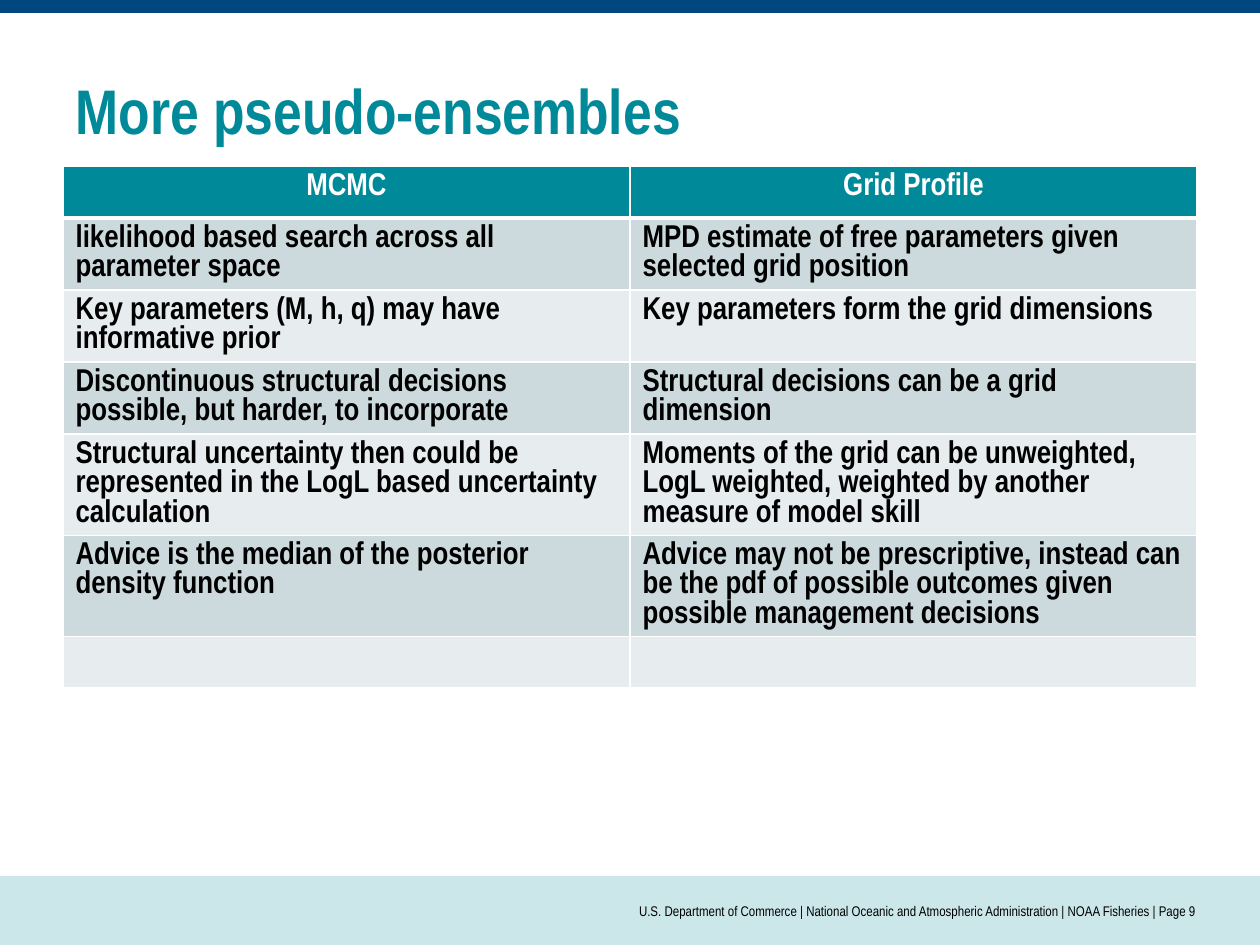
"""Build the slide that compares MCMC with a grid profile."""
from lxml.etree import SubElement
from pptx import Presentation
from pptx.dml.color import RGBColor
from pptx.enum.shapes import MSO_SHAPE
from pptx.enum.text import MSO_ANCHOR, MSO_AUTO_SIZE, PP_ALIGN
from pptx.oxml.ns import qn
from pptx.util import Emu, Pt

TITLE = "More pseudo-ensembles"
FOOTER = " | ".join([
    "U.S. Department of Commerce",
    "National Oceanic and Atmospheric Administration",
    "NOAA Fisheries",
    "Page 9",
])
ROWS = [
    ("MCMC", "Grid Profile"),
    ("likelihood based search across all parameter space",
     "MPD estimate of free parameters given selected grid position"),
    ("Key parameters (M, h, q) may have informative prior",
     "Key parameters form the grid dimensions"),
    ("Discontinuous structural decisions possible, but harder, to incorporate",
     "Structural decisions can be a grid dimension"),
    ("Structural uncertainty then could be represented in the LogL based uncertainty calculation",
     "Moments of the grid can be unweighted, LogL weighted, weighted by another measure of model skill"),
    ("Advice is the median of the posterior density function",
     "Advice may not be prescriptive, instead can be the pdf of possible outcomes "
     "given possible management decisions"),
    ("", ""),
]
ROW_HEIGHTS = [52, 72, 72, 72, 101, 101, 51]
COLORS = {
    "navy": "00467F", "pale": "CCE7EA", "teal": "008998", "white": "FFFFFF",
    "black": "000000", "odd": "CCDADD", "even": "E7EDEF",
}
BANDS = [("navy", (0, 0, 1260, 13)), ("pale", (0, 876, 1260, 69))]
FORMATS = {
    "title": {"size": Pt(36), "bold": True},
    "cell": {"size": Pt(18), "bold": True},
    "footer": {"size": Pt(8), "bold": False},
}
LINE_PITCH = Pt(16.9)


def px(value):
    return Emu(round(value * 914400 / 126))


def color(name):
    return RGBColor.from_string(COLORS[name])


def write(para, text, style, ink, align):
    para.alignment = align
    span = para.add_run()
    span.text = text
    span.font.name = "Arial Narrow"
    span.font.color.rgb = color(ink)
    for key, value in FORMATS[style].items():
        setattr(span.font, key, value)


def set_frame(frame, **values):
    for key, value in values.items():
        setattr(frame, key, value)


def add_borders(cell, top, bottom):
    properties = cell._tc.get_or_add_tcPr()
    for side, width in (("L", 1), ("R", 1), ("T", top), ("B", bottom)):
        line = SubElement(properties, qn(f"a:ln{side}"), w=str(Pt(width)))
        fill = SubElement(line, qn("a:solidFill"))
        SubElement(fill, qn("a:srgbClr"), val=COLORS["white"])


def add_bands(page):
    for name, place in BANDS:
        band = page.shapes.add_shape(MSO_SHAPE.RECTANGLE, *map(px, place))
        band.shadow.inherit = False
        band.fill.solid()
        band.fill.fore_color.rgb = color(name)
        band.line.fill.background()


def add_title(page):
    title = page.shapes.title
    title.left, title.top, title.width, title.height = map(px, (63, 63, 1134, 93))
    set_frame(title.text_frame, word_wrap=True, auto_size=MSO_AUTO_SIZE.NONE,
              vertical_anchor=MSO_ANCHOR.MIDDLE)
    write(title.text_frame.paragraphs[0], TITLE, "title", "teal", PP_ALIGN.LEFT)


def add_comparison(page):
    place = map(px, (63, 166, 1134, sum(ROW_HEIGHTS)))
    table = page.shapes.add_table(len(ROWS), len(ROWS[0]), *place).table
    for row_index, (texts, height) in enumerate(zip(ROWS, ROW_HEIGHTS)):
        table.rows[row_index].height = px(height)
        header = row_index == 0
        fill = "teal" if header else "odd" if row_index % 2 else "even"
        ink = "white" if header else "black"
        align = PP_ALIGN.CENTER if header else PP_ALIGN.LEFT
        for column_index, text in enumerate(texts):
            cell = table.cell(row_index, column_index)
            add_borders(cell, 3 if row_index == 1 else 1, 3 if header else 1)
            cell.fill.solid()
            cell.fill.fore_color.rgb = color(fill)
            if text:
                para = cell.text_frame.paragraphs[0]
                para.line_spacing = LINE_PITCH
                write(para, text, "cell", ink, align)


def add_footer(page):
    box = page.shapes.add_textbox(*map(px, (315, 876, 882, 69)))
    set_frame(box.text_frame, word_wrap=True, margin_left=0, margin_right=0,
              vertical_anchor=MSO_ANCHOR.MIDDLE)
    write(box.text_frame.paragraphs[0], FOOTER, "footer", "black", PP_ALIGN.RIGHT)


def main():
    deck = Presentation()
    deck.slide_width, deck.slide_height = px(1260), px(945)
    page = deck.slides.add_slide(deck.slide_layouts[5])
    add_bands(page)
    add_title(page)
    add_comparison(page)
    add_footer(page)
    deck.save("out.pptx")


if __name__ == "__main__":
    main()
